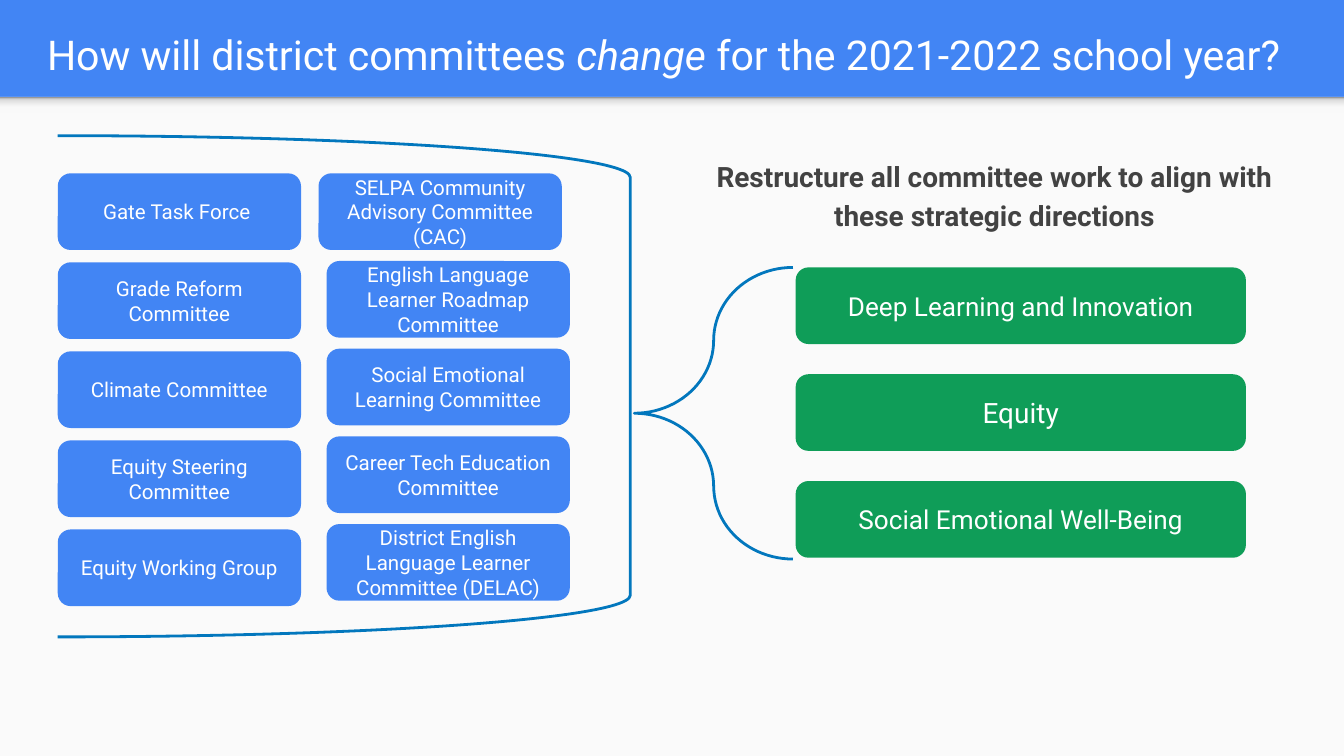
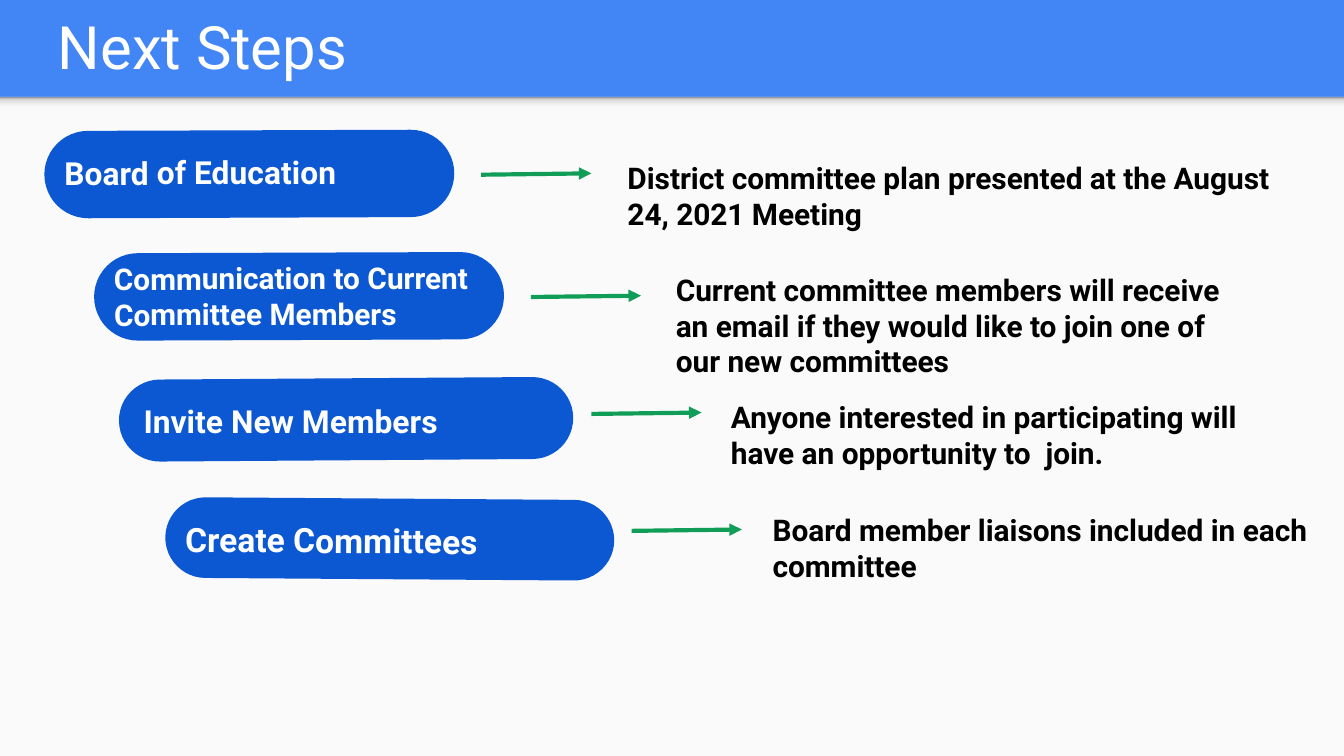
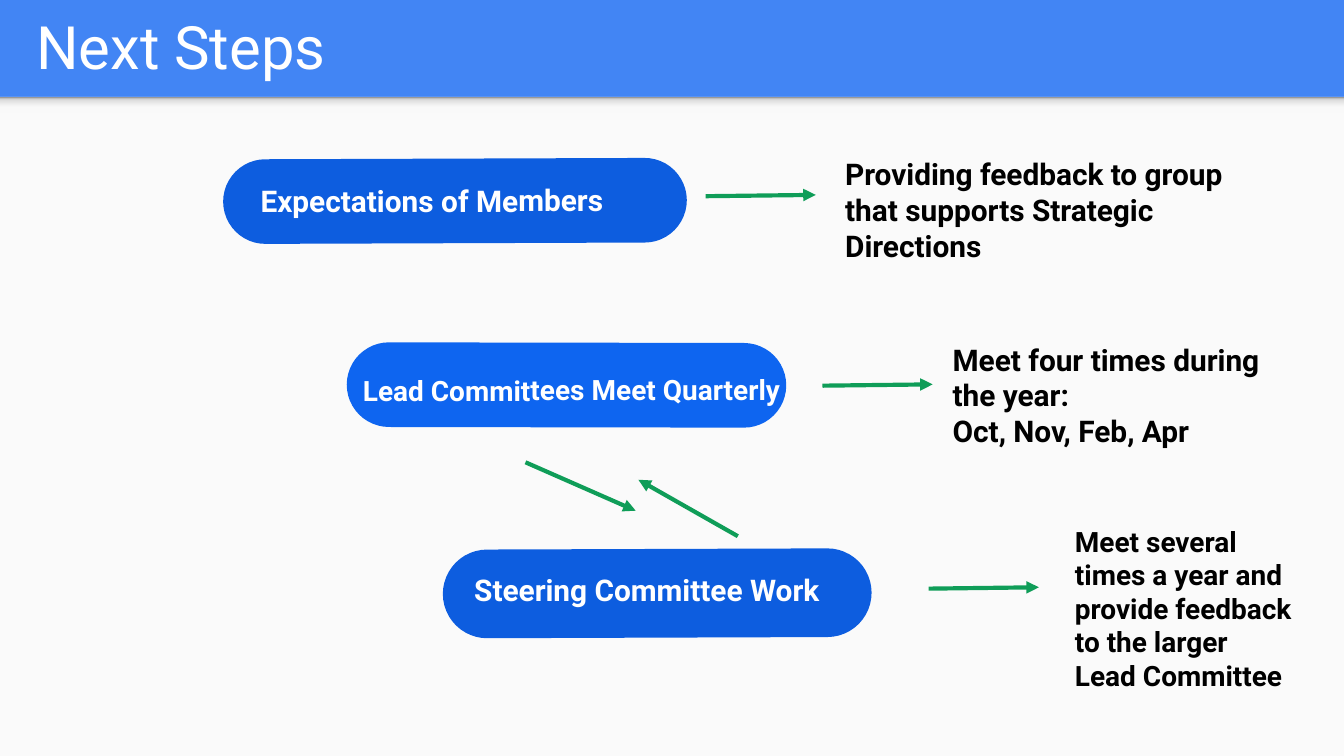
from pptx import Presentation
from pptx.dml.color import RGBColor
from pptx.enum.shapes import MSO_CONNECTOR, MSO_SHAPE
from pptx.enum.text import MSO_ANCHOR, MSO_AUTO_SIZE, PP_ALIGN
from pptx.oxml import parse_xml
from pptx.oxml.ns import nsdecls
from pptx.util import Inches, Pt

BLUE = RGBColor(0x42, 0x85, 0xF4)
DEEP = RGBColor(0x0C, 0x58, 0xD3)
ROYAL = RGBColor(0x0D, 0x5D, 0xDF)
VIVID = RGBColor(0x0E, 0x65, 0xF0)
GREEN = RGBColor(0x0F, 0x9D, 0x58)
TEAL = RGBColor(0x02, 0x77, 0xBD)
PALE = RGBColor(0xFA, 0xFA, 0xFA)
WHITE = RGBColor(0xFF, 0xFF, 0xFF)
GRAY = RGBColor(0x42, 0x42, 0x42)
BLACK = RGBColor(0, 0, 0)
FONT = "Roboto"
SHADE = [(0, "F9F9F9"), (36, "F9F9F9"), (80, "DEDEDE"), (100, "999999")]

FRAME = {
    "word_wrap": True,
    "auto_size": MSO_AUTO_SIZE.NONE,
    "margin_left": Inches(0.1),
    "margin_right": Inches(0.1),
    "margin_top": Inches(0.1),
    "margin_bottom": Inches(0.1),
}
MIDDLE = {"vertical_anchor": MSO_ANCHOR.MIDDLE}
GROW = {"auto_size": MSO_AUTO_SIZE.SHAPE_TO_FIT_TEXT}
CENTER = {"alignment": PP_ALIGN.CENTER}
LEFT = {"alignment": PP_ALIGN.LEFT}

LOCAL = ["Gate Task Force ", "Grade Reform Committee", "Climate Committee",
         "Equity Steering Committee", "Equity Working Group"]
WIDE = ["SELPA Community Advisory Committee (CAC)",
        "English Language Learner Roadmap Committee",
        "Social Emotional Learning Committee",
        "Career Tech Education Committee",
        "District English Language Learner Committee (DELAC)"]
GOALS = [("Deep Learning and Innovation", 14), ("Equity", 15),
         ("Social Emotional Well-Being", 14)]

# pill box, pill turn, label, label size, label box, label turn
STEPS = [
    ((1.53, -0.23, 0.65, 3.05), 89.8, "Board of Education", 17,
     (0.38, 0.95, 2.97, 0.66), 359.8),
    ((1.9, 0.68, 0.65, 3.05), 89.8,
     "Communication to Current Committee Members", 16,
     (0.75, 1.87, 2.97, 0.66), 359.8),
    ((2.27, 1.43, 0.61, 3.38), 89.6, "Invite New Members", 17,
     (0.97, 2.92, 3.24, 0.42), 0.1),
    ((2.6, 2.34, 0.6, 3.34), 90.4, "Create Committees", 18,
     (1.28, 3.82, 3.25, 0.4), 0.4),
]
# arrow start, note box, note
NOTES = [
    ((3.58, 1.3), (4.57, 1.09, 5.19, 0.74),
     "District committee plan presented at the August 24, 2021 Meeting"),
    ((3.95, 2.21), (4.93, 1.92, 4.35, 1.01),
     "Current committee members will receive an email if they would like "
     "to join one of our new committees"),
    ((4.4, 3.08), (5.34, 2.87, 4.29, 0.74),
     "Anyone interested in participating will have an opportunity to  join."),
    ((4.7, 3.95), (5.65, 3.71, 4.29, 0.74),
     "Board member liaisons included in each committee"),
]


def assign(item, *formats):
    for values in formats:
        for name, value in values.items():
            setattr(item, name, value)


def inches(box):
    return [Inches(value) for value in box]


def spread(first, last, items):
    """Pair each item with a top, evenly spaced from first to last."""
    gap = (last - first) / (len(items) - 1)
    return [(first + gap * i, item) for i, item in enumerate(items)]


def write(frame, lines, size, color, para=LEFT, bold=False, **extra):
    """Fill a text frame; a line is a string or a list of (text, italic)."""
    assign(frame, FRAME, extra)
    for i, line in enumerate(lines):
        par = frame.paragraphs[0] if i == 0 else frame.add_paragraph()
        assign(par, para)
        for text, italic in [(line, False)] if isinstance(line, str) else line:
            run = par.add_run()
            run.text = text
            assign(run.font, {"name": FONT, "size": Pt(size), "bold": bold,
                              "italic": italic})
            run.font.color.rgb = color


def block(shapes, kind, box, fill=None, line=None, adjust=()):
    shape = shapes.add_shape(kind, *inches(box))
    shape.shadow.inherit = False
    for i, value in enumerate(adjust):
        shape.adjustments[i] = value
    if fill is None:
        shape.fill.background()
    else:
        shape.fill.solid()
        shape.fill.fore_color.rgb = fill
    if line is None:
        shape.line.fill.background()
    else:
        shape.line.color.rgb = line
        shape.line.width = Pt(1.5)
    return shape


def card(slide, box, text, size, fill):
    shape = block(slide.shapes, MSO_SHAPE.ROUNDED_RECTANGLE, box, fill,
                  adjust=[0.167])
    write(shape.text_frame, [text], size, WHITE, CENTER, **MIDDLE)


def pill(shapes, box, turn, fill):
    shape = block(shapes, MSO_SHAPE.ROUNDED_RECTANGLE, box, fill, adjust=[0.5])
    shape.rotation = turn


def label(shapes, box, turn, text, size, **extra):
    area = shapes.add_textbox(*inches(box))
    area.rotation = turn
    write(area.text_frame, [text], size, WHITE, bold=True, **MIDDLE, **extra)


def step(slide, box, turn, text, size, area, tilt, fill=DEEP):
    """Group a pill with its label."""
    shapes = slide.shapes.add_group_shape().shapes
    pill(shapes, box, turn, fill)
    label(shapes, area, tilt, text, size)


def note(slide, box, *lines, size=16, color=BLACK, para=LEFT):
    area = slide.shapes.add_textbox(*inches(box))
    write(area.text_frame, lines, size, color, para, bold=True, **GROW)


def arrow(slide, start, run=0.82, rise=-0.01):
    x, y = start
    line = slide.shapes.add_connector(
        MSO_CONNECTOR.STRAIGHT, *inches((x, y, x + run, y + rise)))
    line.line.color.rgb = GREEN
    line.line.width = Pt(2.25)
    line.line._get_or_add_ln().append(
        parse_xml(f'<a:tailEnd {nsdecls("a")} type="triangle"/>'))
    line.element.spPr.append(parse_xml(f'<a:effectLst {nsdecls("a")}/>'))


def style(layout, slide):
    """Give the layout its blue ground, pale panel and shaded edge."""
    layout.background.fill.solid()
    layout.background.fill.fore_color.rgb = BLUE
    panel = block(slide.shapes, MSO_SHAPE.RECTANGLE, (0, 0.72, 10, 4.91), PALE)
    edge = block(slide.shapes, MSO_SHAPE.RECTANGLE, (0, 0.72, 10, 0.12), PALE)
    edge.fill.gradient()
    edge.fill.gradient_angle = 90
    stops = edge.element.xpath(".//a:gsLst")[0]
    stops.clear()
    for place, color in SHADE:
        stops.append(parse_xml(
            f'<a:gs {nsdecls("a")} pos="{place * 1000}">'
            f'<a:srgbClr val="{color}"/></a:gs>'))
    for i, shape in enumerate((panel, edge)):
        layout.shapes.element.insert(2 + i, shape.element)


def head(slide, box, line, size):
    title = slide.shapes.title
    names = ("left", "top", "width", "height")
    assign(title, dict(zip(names, inches(box))))
    write(title.text_frame, [line], size, WHITE, **MIDDLE)


def change(slide):
    head(slide, (0.25, 0.07, 9.65, 0.66),
         [("How will district committees ", False), ("change", True),
          (" for the 2021-2022 school year?", False)], 22)
    for top, text in spread(1.29, 3.94, LOCAL):
        card(slide, (0.43, top, 1.81, 0.57), text, 11, BLUE)
    for top, text in spread(1.29, 3.9, WIDE):
        left = 2.37 if text == WIDE[0] else 2.43
        card(slide, (left, top, 1.81, 0.57), text, 11, BLUE)
    for top, (text, size) in spread(1.99, 3.58, GOALS):
        card(slide, (5.92, top, 3.35, 0.57), text, size, GREEN)
    block(slide.shapes, MSO_SHAPE.RIGHT_BRACKET, (0.43, 1.01, 4.26, 3.73),
          line=TEAL, adjust=[0.083])
    block(slide.shapes, MSO_SHAPE.LEFT_BRACE, (4.72, 1.99, 1.18, 2.17),
          line=TEAL, adjust=[0.5, 0.5])
    note(slide, (4.96, 1.05, 4.88, 0.74),
         "Restructure all committee work to align with these strategic "
         "directions", size=15, color=GRAY,
         para={**CENTER, "line_spacing": 1.15, "space_after": Pt(16)})


def plan(slide):
    head(slide, (0.33, -0.01, 9.65, 0.7), "Next Steps", 32)
    for values in STEPS:
        step(slide, *values)
    for start, box, text in NOTES:
        arrow(slide, start)
        note(slide, box, text)


def meet(slide):
    head(slide, (0.17, -0.01, 9.65, 0.7), "Next Steps", 32)
    step(slide, (3.07, -0.23, 0.63, 3.45), 89.8, "Expectations of Members", 16,
         (1.84, 1.23, 3.09, 0.52), 359.8, ROYAL)
    pill(slide.shapes, (3.9, 1.23, 0.63, 3.27), 90.1, VIVID)
    label(slide.shapes, (2.4, 2.14, 3.54, 1.52), 359.9,
          "Lead Committees Meet Quarterly", 15, margin_left=Inches(0.3))
    pill(slide.shapes, (4.56, 2.82, 0.66, 3.19), 89.8, ROYAL)
    label(slide.shapes, (3.43, 3.48, 3.05, 1.82), 0,
          "Steering Committee Work", 16)
    for start in ((5.25, 1.46), (6.12, 2.87), (6.91, 4.38)):
        arrow(slide, start)
    arrow(slide, (3.91, 3.44), 0.82, 0.36)
    arrow(slide, (5.49, 3.99), -0.74, -0.42)
    note(slide, (6.19, 1.06, 3.12, 1.01),
         "Providing feedback to group that supports Strategic Directions")
    note(slide, (6.99, 2.44, 2.64, 0.93),
         "Meet four times during the year:", "Oct, Nov, Feb, Apr")
    note(slide, (7.9, 3.8, 1.82, 1.46),
         "Meet several times a year and provide feedback to the larger "
         "Lead Committee", size=15)


def main():
    deck = Presentation()
    deck.slide_width = Inches(10)
    deck.slide_height = deck.slide_width * 9 // 16
    layout = deck.slide_layouts[5]
    slides = [deck.slides.add_slide(layout) for _ in range(3)]
    style(layout, slides[0])
    for build, slide in zip((change, plan, meet), slides):
        build(slide)
    deck.save("out.pptx")


if __name__ == "__main__":
    main()
